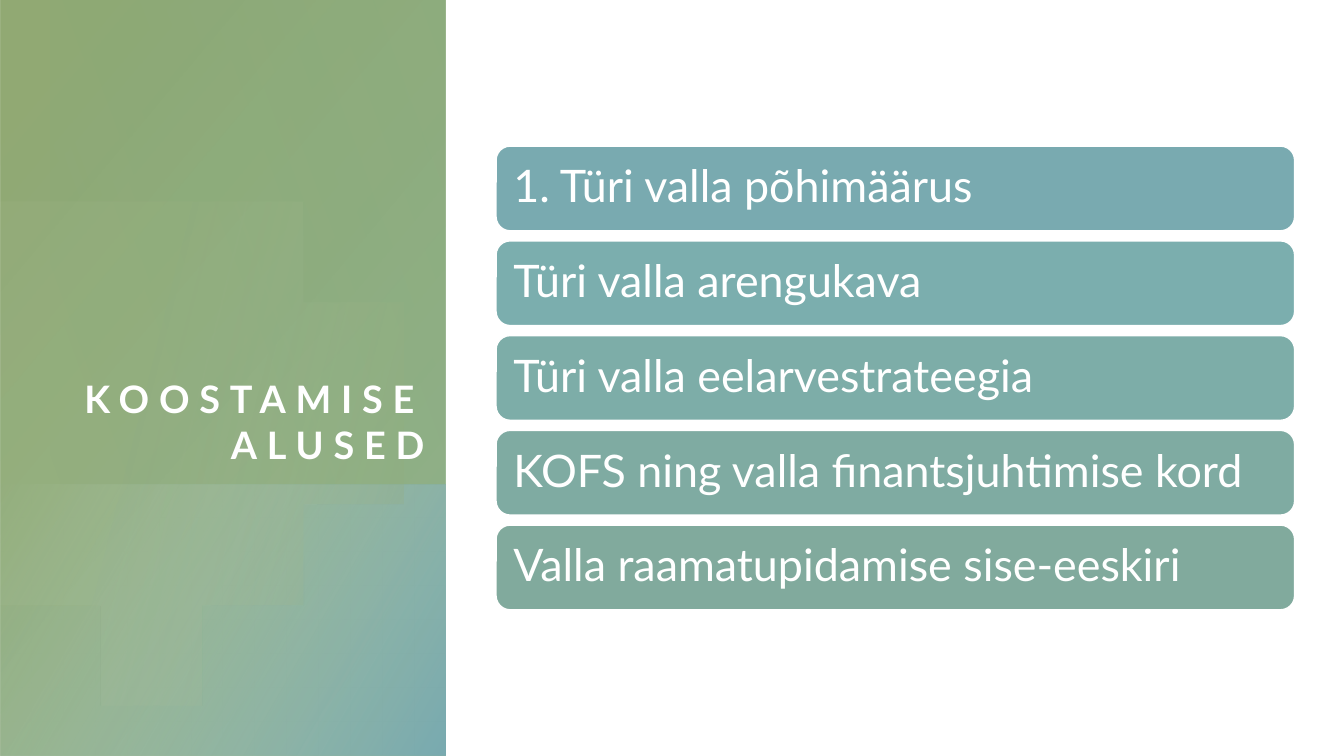
import math

from lxml import etree
from pptx import Presentation
from pptx.dml.color import RGBColor
from pptx.enum import shapes, text
from pptx.oxml import ns
from pptx.util import Inches, Pt

FONT = "Lato"
BASES = [
    ("1. Türi valla põhimäärus", "79AAB0"),
    ("Türi valla arengukava", "7BAEAE"),
    ("Türi valla eelarvestrateegia", "7DADA8"),
    ("KOFS ning valla finantsjuhtimise kord", "7FABA2"),
    ("Valla raamatupidamise sise-eeskiri", "81AA9D"),
]


def rgb(value):
    return RGBColor.from_string(value)


def fill_gradient(sp, stops, angle):
    sp.shadow.inherit = False
    sp.line.fill.background()
    sp.fill.gradient()
    grad = sp._element.spPr.find(ns.qn("a:gradFill"))
    grad.set("rotWithShape", "1")
    for child in list(grad):
        grad.remove(child)
    stop_list = etree.SubElement(grad, ns.qn("a:gsLst"))
    for position, color, alpha in stops:
        stop = etree.SubElement(stop_list, ns.qn("a:gs"), pos=str(position * 1000))
        clr = etree.SubElement(stop, ns.qn("a:srgbClr"), val=color)
        etree.SubElement(clr, ns.qn("a:alpha"), val=str(alpha * 1000))
    etree.SubElement(grad, ns.qn("a:lin"), ang=str(angle * 60000), scaled="0")


def add_turned_rect(slide, left, top, width, height, rotation, stops, angle):
    shift = (width - height) / 2
    sp = slide.shapes.add_shape(
        shapes.MSO_SHAPE.RECTANGLE,
        Inches(left + shift), Inches(top - shift), Inches(height), Inches(width))
    sp.rotation = rotation
    sp._element.spPr.find(ns.qn("a:xfrm")).set("flipH", "1")
    fill_gradient(sp, stops, angle)


def add_clipped_circle(slide, left, center_x, center_y, radius):
    limit = math.acos((left - center_x) / radius)
    steps = 120
    angles = [limit * (2 * i / steps - 1) for i in range(steps + 1)]
    points = [(center_x + radius * math.cos(a), center_y + radius * math.sin(a))
              for a in angles]
    builder = slide.shapes.build_freeform(*points[0], scale=Inches(1))
    builder.add_line_segments(points[1:], close=True)
    fill_gradient(builder.convert_to_shape(),
                  [(36, "BDCBAB", 6), (100, "91A973", 26)], 14)


def add_side_panel(slide, left, top, width, height):
    split = 4.81
    add_turned_rect(slide, left, top, width, height, 270,
                    [(8, "91A973", 100), (100, "87AB81", 89)], 50)
    add_turned_rect(slide, left, top + split, width, height - split, 270,
                    [(0, "B7CDB3", 0), (99, "79AAB0", 100)], 60)
    add_clipped_circle(slide, left, left + 1.57, top + 4.24, 2.29)
    add_turned_rect(slide, left + 0.5, top, width - 0.5, split, 90,
                    [(0, "87AB81", 29), (100, "77AF87", 0)], 110)


def format_text(tf, inset, anchor, align, size):
    tf.word_wrap = True
    tf.auto_size = text.MSO_AUTO_SIZE.NONE
    tf.margin_left = tf.margin_right = tf.margin_top = tf.margin_bottom = Inches(inset)
    tf.vertical_anchor = anchor
    p = tf.paragraphs[0]
    p.alignment = align
    r = p.runs[0]
    r.font.name = FONT
    r.font.size = Pt(size)
    r.font.color.rgb = rgb("FFFFFF")
    return p


def add_title(slide, left, top, width, height):
    title = slide.shapes.title
    title.left, title.top = Inches(left), Inches(top)
    title.width, title.height = Inches(width), Inches(height)
    title.text_frame.text = "KOOSTAMISE ALUSED"
    p = format_text(title.text_frame, 0, text.MSO_ANCHOR.BOTTOM,
                    text.PP_ALIGN.RIGHT, 27)
    r = p.runs[0]
    r.font.bold = True
    r.font._element.set("spc", "700")
    slide.shapes._spTree.append(title._element)


def add_bases(slide, left, top, width, height):
    gap = 0.1
    bar_height = (height - gap * (len(BASES) - 1)) / len(BASES)
    for i, (label, color) in enumerate(BASES):
        sp = slide.shapes.add_shape(
            shapes.MSO_SHAPE.ROUNDED_RECTANGLE,
            Inches(left), Inches(top + i * (bar_height + gap)),
            Inches(width), Inches(bar_height))
        sp.shadow.inherit = False
        sp.fill.solid()
        sp.fill.fore_color.rgb = rgb(color)
        sp.line.color.rgb = rgb("FFFFFF")
        sp.line.width = Pt(1)
        sp.text_frame.text = label
        p = format_text(sp.text_frame, 0.13, text.MSO_ANCHOR.MIDDLE,
                        text.PP_ALIGN.LEFT, 32)
        p.line_spacing = 0.9


def main():
    prs = Presentation()
    prs.slide_width, prs.slide_height = Inches(13.33), Inches(7.5)
    slide = prs.slides.add_slide(prs.slide_layouts[5])
    add_side_panel(slide, 0, 0, 4.42, 7.5)
    add_title(slide, 0.5, 0.95, 3.71, 3.68)
    add_bases(slide, 4.92, 1.45, 7.92, 4.6)
    prs.save("out.pptx")


if __name__ == "__main__":
    main()
